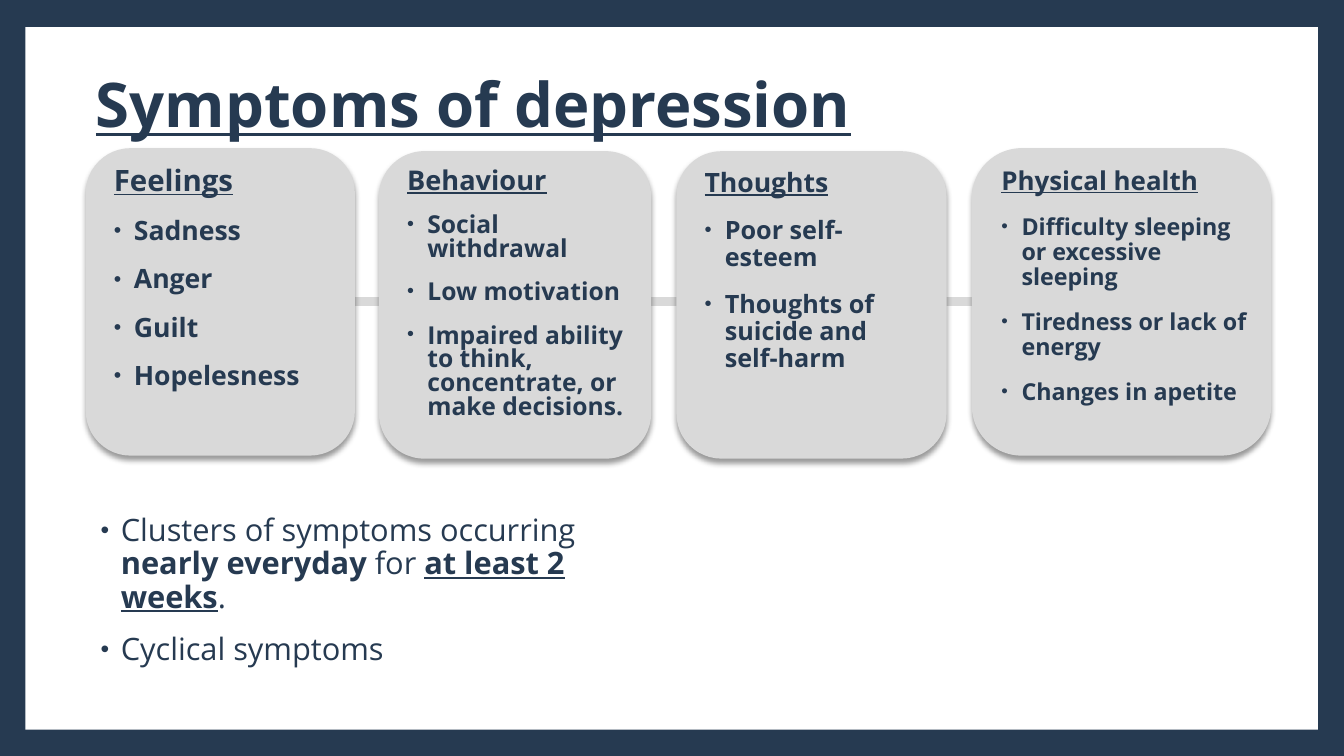
from lxml.etree import SubElement
from pptx import Presentation
from pptx.dml.color import RGBColor
from pptx.enum.shapes import MSO_CONNECTOR, MSO_SHAPE
from pptx.enum.text import MSO_ANCHOR, MSO_AUTO_SIZE, PP_ALIGN
from pptx.oxml.ns import qn
from pptx.util import Inches, Pt

NAVY, GREY, WHITE = "263A51", "D9D9D9", "FFFFFF"


def paint(target, color):
    """Give a fill one solid colour."""
    target.solid()
    target.fore_color.rgb = RGBColor.from_string(color)


def node(parent, tag, **attrs):
    return SubElement(parent, qn(tag), {k: str(v) for k, v in attrs.items()})


def write(para, *runs, size=20, bold=False, line=False, lead=0.9, gap=14,
          left=0.0, bullet=False):
    """Fill a paragraph; a run is a text or (text, bold, underline)."""
    para.alignment = PP_ALIGN.LEFT
    para.line_spacing = lead
    para.space_before = Pt(gap)
    for item in runs:
        words, heavy, under = (item, bold, line) if isinstance(item, str) else item
        run = para.add_run()
        run.text = words
        font = run.font
        font.name, font.size = "Open Sans", Pt(size)
        font.bold, font.underline = heavy, under
        paint(font.fill, NAVY)
    props = para._p.get_or_add_pPr()
    props.set("marL", str(Inches(0.25 if bullet else left)))
    props.set("indent", str(Inches(-0.2 if bullet else 0)))
    if bullet:
        node(node(props, "a:buClr"), "a:srgbClr", val=NAVY)
        node(props, "a:buSzPct", val=80000)
        node(props, "a:buFont", typeface="Arial")
        node(props, "a:buChar", char="•")
    else:
        node(props, "a:buNone")


class Deck:
    """Current slide; lengths are percentages of its width and height."""

    def __init__(self):
        self.file = Presentation()
        self.file.slide_width, self.file.slide_height = Inches(13.33), Inches(7.5)
        self.slide = self.file.slides.add_slide(self.file.slide_layouts[5])
        self.shapes = self.slide.shapes
        paint(self.slide.background.fill, NAVY)

    def x(self, share):
        return round(self.file.slide_width * share / 100)

    def y(self, share):
        return round(self.file.slide_height * share / 100)

    def box(self, left, top, width, height):
        return self.x(left), self.y(top), self.x(width), self.y(height)

    def frame(self, shape, anchor=MSO_ANCHOR.TOP):
        body = shape.text_frame
        body.word_wrap = True
        body.auto_size = MSO_AUTO_SIZE.NONE
        body.vertical_anchor = anchor
        return body

    def panel(self, *area, kind=MSO_SHAPE.RECTANGLE, color=WHITE):
        shape = self.shapes.add_shape(kind, *self.box(*area))
        shape.shadow.inherit = False
        paint(shape.fill, color)
        shape.line.fill.background()
        return shape

    def link(self, start, end, level):
        line = self.shapes.add_connector(
            MSO_CONNECTOR.STRAIGHT, self.x(start), self.y(level),
            self.x(end), self.y(level))
        paint(line.line.fill, GREY)
        line.line.width = Pt(6)
        node(line._element.spPr, "a:effectLst")

    def title(self, words, *area):
        shape = self.shapes.title
        shape.left, shape.top, shape.width, shape.height = self.box(*area)
        self.shapes._spTree.append(shape._element)  # above the white panel
        body = self.frame(shape, MSO_ANCHOR.MIDDLE)
        write(body.paragraphs[0], words, size=44, bold=True, line=True, gap=0)

    def card(self, area, head, items, sizes, lead):
        shape = self.panel(*area, kind=MSO_SHAPE.ROUNDED_RECTANGLE, color=GREY)
        effects = shape._element.spPr.find(qn("a:effectLst"))
        shade = node(effects, "a:outerShdw", blurRad=Pt(4), dist=Pt(3),
                     dir=5400000, algn="t", rotWithShape=0)
        node(node(shade, "a:srgbClr", val="000000"), "a:alpha", val=40000)
        body = self.frame(shape)
        write(body.paragraphs[0], head, size=sizes[0], bold=True, line=True,
              lead=lead, left=0.05)
        for item in items:
            write(body.add_paragraph(), item, size=sizes[1], bold=True,
                  lead=lead, bullet=True)

    def notes(self, area, *items):
        body = self.frame(self.shapes.add_textbox(*self.box(*area)))
        for i, runs in enumerate(items):
            para = body.add_paragraph() if i else body.paragraphs[0]
            write(para, *runs, size=22, bullet=True)


# Card: left, top, width, heading, items, heading and item size, line spacing
CARDS = [
    (6.38, 19.6, 20.03, "Feelings",
     ["Sadness", "Anger", "Guilt", "Hopelesness"], (21, 19), 0.9),
    (28.2, 20, 20.25, "Behaviour",
     ["Social withdrawal", "Low motivation",
      "Impaired ability to think, concentrate, or make decisions."],
     (19.4, 17.6), 0.8),
    (50.33, 20, 20.1, "Thoughts",
     ["Poor self-esteem", "Thoughts of suicide and self-harm"], (19, 18), 0.9),
    (72.31, 19.6, 22.28, "Physical health",
     ["Difficulty sleeping or excessive sleeping",
      "Tiredness or lack of energy", "Changes in apetite"], (18.5, 16.6), 0.9),
]


def main():
    deck = Deck()

    # Backdrop and the line that joins the cards
    deck.panel(1.88, 3.6, 96.17, 92.93)
    deck.link(23.7, 78.85, 39.87)

    # Title
    deck.title("Symptoms of depression", 6.38, 4.4, 81.02, 19.73)

    # Symptom cards
    for left, top, width, head, items, sizes, lead in CARDS:
        deck.card((left, top, width, 40.67), head, items, sizes, lead)

    # Summary
    deck.notes(
        (6.38, 67.47, 42.69, 28.8),
        ["Clusters of symptoms occurring ", ("nearly everyday", True, False),
         " for ", ("at least 2 weeks", True, True), "."],
        ["Cyclical symptoms"])

    deck.file.save("out.pptx")


if __name__ == "__main__":
    main()
